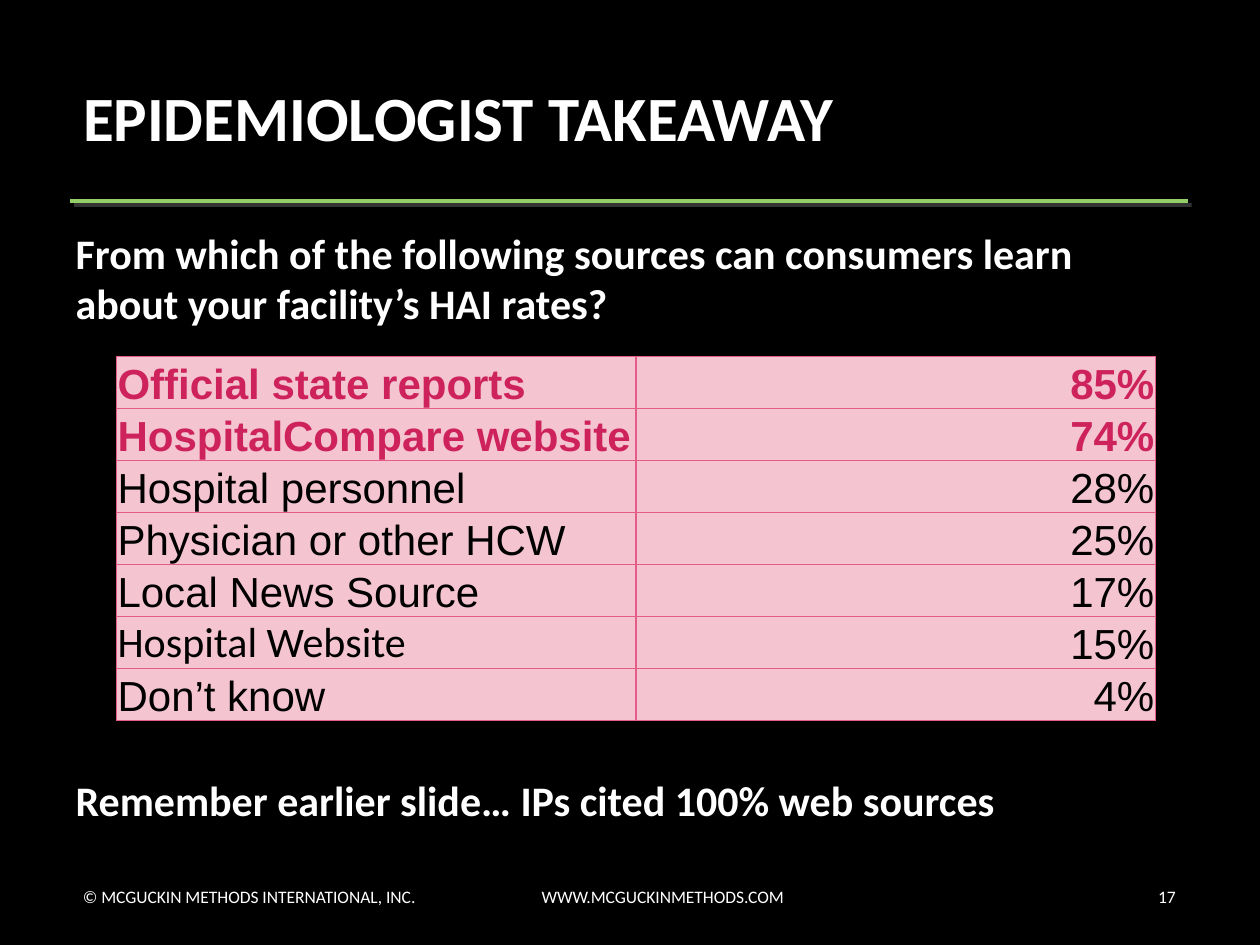
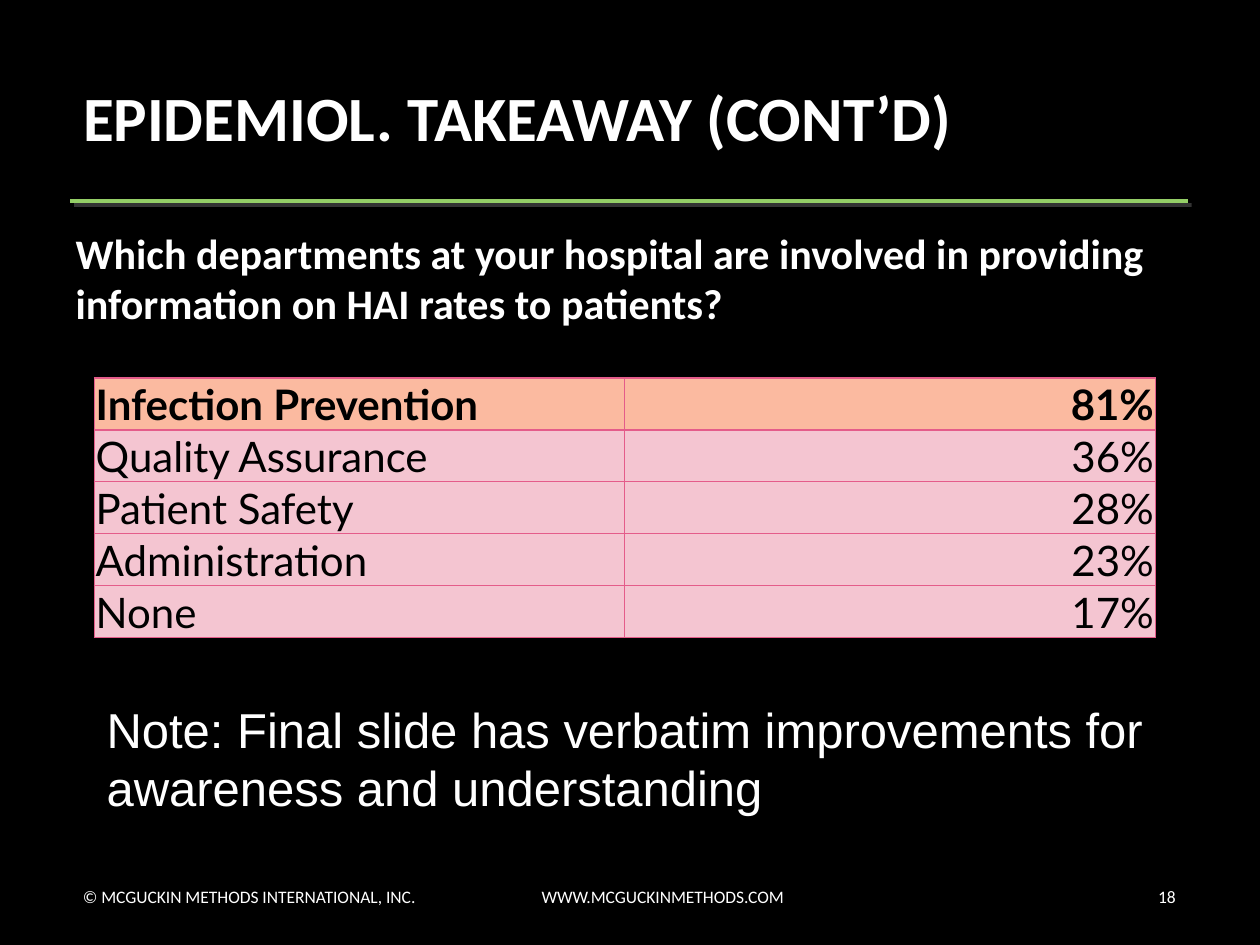
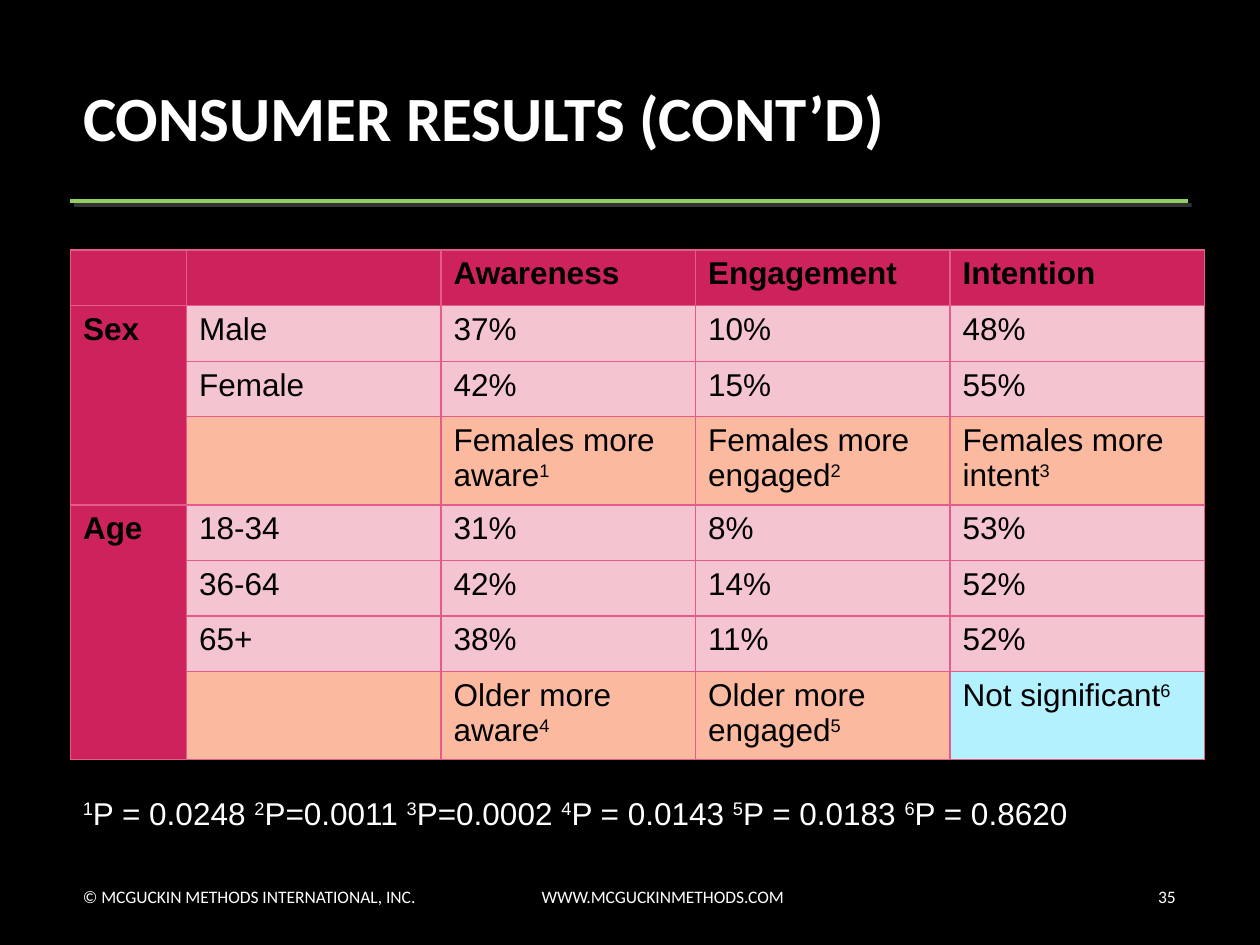
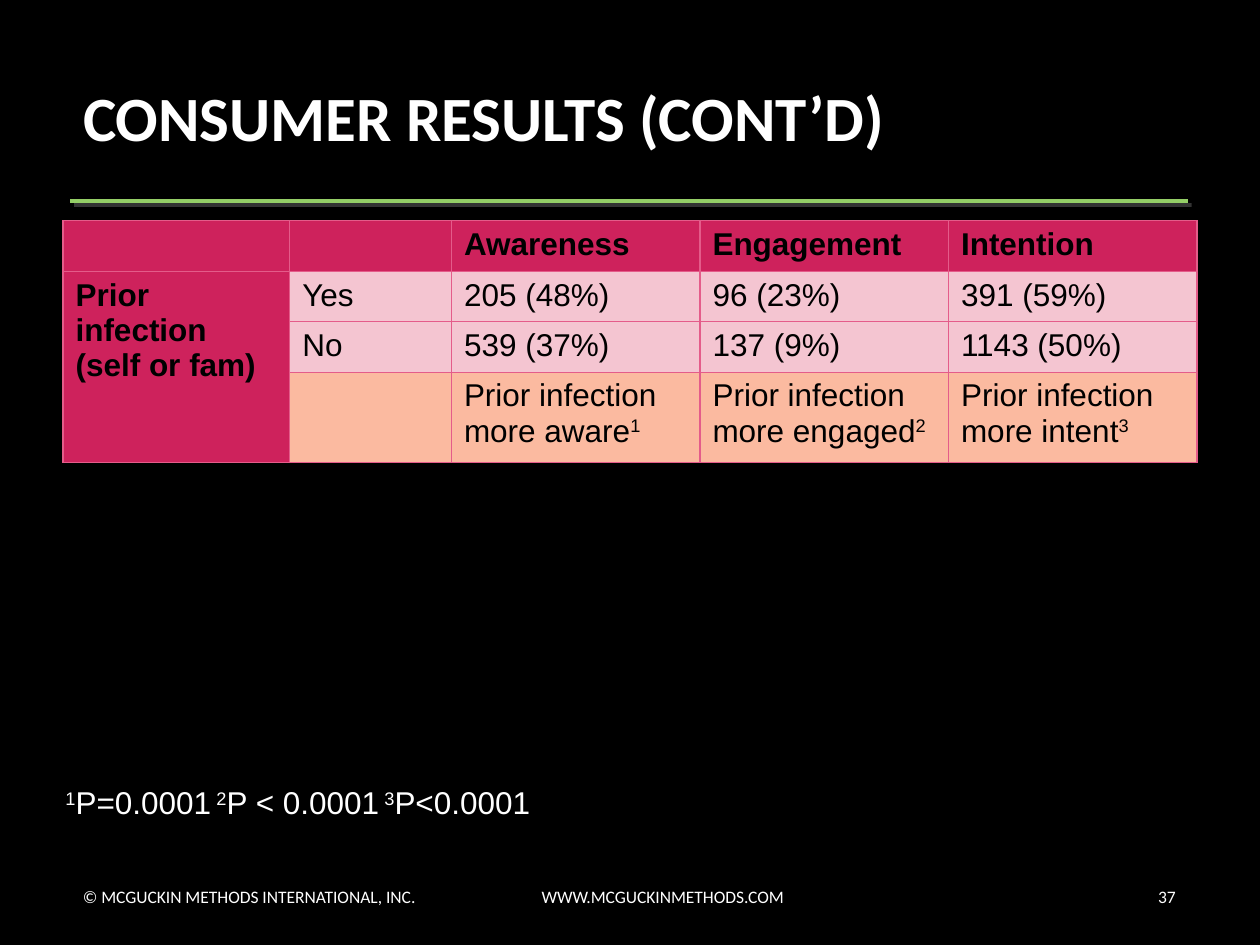
from typing import NamedTuple

from lxml.etree import SubElement
from pptx import Presentation
from pptx.dml.color import RGBColor
from pptx.enum.shapes import MSO_CONNECTOR as Connector
from pptx.enum.text import MSO_ANCHOR as Anchor, MSO_AUTO_SIZE as AutoSize, PP_ALIGN as Align
from pptx.oxml.ns import qn
from pptx.util import Cm, Pt

BLACK, WHITE, GREEN, GREY = "000000", "FFFFFF", "94CE67", "808080"
CRIMSON, PINK, ROSE = "CE225C", "F4C5D1", "E45C8A"
PEACH, SKY = "FBBAA0", "B3F1FF"


class Box(NamedTuple):
    """A region of the slide, in centimetres."""
    left: float
    top: float
    width: float
    height: float

    def lengths(self):
        """Return the four measures as lengths."""
        return [Cm(value) for value in self]


class Style(NamedTuple):
    """The look of a piece of text."""
    size: float
    font: str = "Arial"
    color: str = WHITE
    bold: bool = False


SLIDE = Box(0, 0, 25.4, 19.05)
TITLE = Box(1.42, 0.66, 22.53, 3.38)
BODY = Box(1.27, 4.45, 22.86, 14.17)
FOOTER = Box(1.42, 17.55, 22.53, 1.04)
RULE_TOP = 4.06
URL_TAB = 9.25
NUMBER_WIDTH = 1.14

TITLE_STYLE = Style(36, "Calibri", bold=True)
BODY_STYLE = Style(24, "Calibri", bold=True)
FOOTER_STYLE = Style(10, "Calibri")
PLAIN = Style(24, "Arial", BLACK)
KEY = Style(24, "Arial", CRIMSON, True)
GRID = Style(18, "Arial", BLACK)
FOOTNOTE = Style(18)


def rgb(hex_color):
    """Turn a hex string into a colour."""
    return RGBColor.from_string(hex_color)


def apply_style(paragraph, style):
    """Format every run of a paragraph."""
    for run in paragraph.runs:
        run.font.size = Pt(style.size)
        run.font.name = style.font
        run.font.bold = style.bold
        run.font.color.rgb = rgb(style.color)


def write(paragraph, text, style):
    """Write text whose superscripts stand between carets."""
    for index, part in enumerate(text.split("^")):
        if part:
            run = paragraph.add_run()
            run.text = part
            if index % 2:
                run.font._element.set("baseline", "30000")
    apply_style(paragraph, style)


def add_text(slide, box, text, style, align=Align.LEFT, anchor=Anchor.TOP):
    """Add a wrapped text box and return its paragraph."""
    frame = slide.shapes.add_textbox(*box.lengths()).text_frame
    frame.word_wrap = True
    frame.vertical_anchor = anchor
    paragraph = frame.paragraphs[0]
    paragraph.alignment = align
    write(paragraph, text, style)
    return paragraph


def place(placeholder, box, anchor):
    """Move a placeholder into a box and return its text frame."""
    placeholder.left, placeholder.top, placeholder.width, placeholder.height = box.lengths()
    frame = placeholder.text_frame
    frame.word_wrap = True
    frame.auto_size = AutoSize.NONE
    frame.vertical_anchor = anchor
    return frame


def add_title(slide, text):
    """Fill the title placeholder."""
    frame = place(slide.shapes.title, TITLE, Anchor.MIDDLE)
    frame.text = text
    frame.paragraphs[0].alignment = Align.LEFT
    apply_style(frame.paragraphs[0], TITLE_STYLE)


def add_body(slide, question, remark=None, gap=0):
    """Fill the body placeholder with a question and a remark further down."""
    frame = place(slide.placeholders[1], BODY, Anchor.TOP)
    frame.text = "\n".join(filter(None, (question, remark)))
    for index, paragraph in enumerate(frame.paragraphs):
        paragraph.space_before = Pt(gap * index)
        properties = paragraph._p.get_or_add_pPr()
        properties.set("marL", "0")
        properties.set("indent", "0")
        SubElement(properties, qn("a:buNone"))
        apply_style(paragraph, BODY_STYLE)


def add_footer(slide, number):
    """Add the copyright line, web address and slide number."""
    copyright_box = FOOTER._replace(width=17.65)
    line = add_text(slide, copyright_box,
                    "© MCGUCKIN METHODS INTERNATIONAL, INC.\tWWW.MCGUCKINMETHODS.COM",
                    FOOTER_STYLE, anchor=Anchor.MIDDLE)
    tabs = SubElement(line._p.get_or_add_pPr(), qn("a:tabLst"))
    SubElement(tabs, qn("a:tab"), pos=str(Cm(URL_TAB)), algn="l")
    number_box = FOOTER._replace(left=FOOTER.left + FOOTER.width - NUMBER_WIDTH,
                                 width=NUMBER_WIDTH)
    add_text(slide, number_box, str(number), FOOTER_STYLE, Align.RIGHT, Anchor.MIDDLE)


def add_master_rule(prs, slide):
    """Draw the green rule with its shadow and hand it to the master."""
    rule = slide.shapes.add_connector(Connector.STRAIGHT, Cm(TITLE.left), Cm(RULE_TOP),
                                      Cm(TITLE.left + TITLE.width), Cm(RULE_TOP))
    rule.line.color.rgb = rgb(GREEN)
    rule.line.width = Pt(2.25)
    effects = SubElement(rule._element.spPr, qn("a:effectLst"))
    shadow = SubElement(effects, qn("a:outerShdw"), dist=str(Pt(3)), dir="2700000",
                        algn="ctr", rotWithShape="0")
    tint = SubElement(shadow, qn("a:srgbClr"), val=GREY)
    SubElement(tint, qn("a:alpha"), val="40000")
    prs.slide_master.shapes.element.append(rule._element)


def paint_cell(cell, fill):
    """Give a cell its borders and fill."""
    properties = cell._tc.get_or_add_tcPr()
    for side in ("L", "R", "T", "B"):
        border = SubElement(properties, qn(f"a:ln{side}"), w=str(Pt(0.75)))
        SubElement(SubElement(border, qn("a:solidFill")), qn("a:srgbClr"), val=ROSE)
    cell.fill.solid()
    cell.fill.fore_color.rgb = rgb(fill)


def add_grid(slide, box, columns, rows):
    """Add an unstyled table with the given column widths and row heights."""
    table = slide.shapes.add_table(len(rows), len(columns), *box.lengths()).table
    table.first_row = table.horz_banding = False
    for column, width in zip(table.columns, columns):
        column.width = Cm(width)
    for row, height in zip(table.rows, rows):
        row.height = Cm(height)
    return table


def add_share_table(slide, box, answers):
    """Add a two-column table of answers, shares, fills and styles."""
    rows = [box.height / len(answers)] * len(answers)
    table = add_grid(slide, box, [box.width / 2] * 2, rows)
    for row, (answer, share, fill, answer_style, share_style) in enumerate(answers):
        parts = ((answer, answer_style, Align.LEFT), (share, share_style, Align.RIGHT))
        for column, (text, style, align) in enumerate(parts):
            cell = table.cell(row, column)
            paint_cell(cell, fill)
            cell.margin_left = cell.margin_right = cell.margin_top = Cm(0.03)
            cell.margin_bottom = 0
            cell.vertical_anchor = Anchor.BOTTOM
            paragraph = cell.text_frame.paragraphs[0]
            paragraph.alignment = align
            write(paragraph, text, style)


def add_results_table(slide, box, columns, rows, groups, special=None):
    """Add a results grid whose groups end in a finding row."""
    heading = ("", "", "Awareness", "Engagement", "Intention")
    lines, fills, spans = [heading], [CRIMSON], []
    for label, results in groups:
        spans.append((len(lines), len(lines) + len(results) - 1))
        lines += [(label if index == 0 else "", *result) for index, result in enumerate(results)]
        fills += [PINK] * (len(results) - 1) + [PEACH]
    table = add_grid(slide, box, columns, rows)
    for row, (line, row_fill) in enumerate(zip(lines, fills)):
        for column, text in enumerate(line):
            cell = table.cell(row, column)
            label = row == 0 or column == 0
            paint_cell(cell, CRIMSON if label else SKY if text == special else row_fill)
            if text:
                write(cell.text_frame.paragraphs[0], text, GRID._replace(bold=label))
            else:
                cell.margin_top = cell.margin_bottom = 0
    for first, last in spans:
        table.cell(first, 0).merge(table.cell(last, 0))


def start_slide(prs, layout, title, number):
    """Add a slide with its title and footer."""
    slide = prs.slides.add_slide(prs.slide_layouts[layout])
    add_title(slide, title)
    add_footer(slide, number)
    return slide


def sources_slide(prs):
    """Build the slide on sources of HAI rates."""
    slide = start_slide(prs, 1, "EPIDEMIOLOGIST TAKEAWAY", 17)
    add_body(slide, "From which of the following sources can consumers learn "
             "about your facility’s HAI rates?",
             "Remember earlier slide… IPs cited 100% web sources", 255)
    website = PLAIN._replace(font="Calibri")
    add_share_table(slide, Box(2.34, 7.19, 20.96, 6.79), [
        ("Official state reports", "85%", PINK, KEY, KEY),
        ("HospitalCompare website", "74%", PINK, KEY, KEY),
        ("Hospital personnel", "28%", PINK, PLAIN, PLAIN),
        ("Physician or other HCW", "25%", PINK, PLAIN, PLAIN),
        ("Local News Source", "17%", PINK, PLAIN, PLAIN),
        ("Hospital Website", "15%", PINK, website, PLAIN),
        ("Don’t know", "4%", PINK, PLAIN, PLAIN),
    ])
    return slide


def departments_slide(prs):
    """Build the slide on departments that inform patients."""
    slide = start_slide(prs, 1, "EPIDEMIOL. TAKEAWAY (CONT’D)", 18)
    add_body(slide, "Which departments at your hospital are involved in providing "
             "information on HAI rates to patients?")
    normal = PLAIN._replace(font="Lato")
    strong = normal._replace(bold=True)
    others = [("Quality Assurance", "36%"), ("Patient Safety", "28%"),
              ("Administration", "23%"), ("None", "17%")]
    add_share_table(slide, Box(1.9, 7.62, 21.39, 5.23),
                    [("Infection Prevention", "81%", PEACH, strong, strong)]
                    + [(*other, PINK, normal, normal) for other in others])
    add_text(slide, Box(1.9, 13.97, 21.39, 2.64),
             "Note: Final slide has verbatim improvements for awareness and understanding",
             Style(28))


def demographics_slide(prs):
    """Build the slide on results by sex and age."""
    slide = start_slide(prs, 5, "CONSUMER RESULTS (CONT’D)", 35)
    single, double = 1.12, 1.67
    not_significant = "Not significant^6^"
    groups = [
        ("Sex", [("Male", "37%", "10%", "48%"),
                 ("Female", "42%", "15%", "55%"),
                 ("", "Females more aware^1^", "Females more engaged^2^",
                  "Females more intent^3^")]),
        ("Age", [("18-34", "31%", "8%", "53%"),
                 ("36-64", "42%", "14%", "52%"),
                 ("65+", "38%", "11%", "52%"),
                 ("", "Older more aware^4^", "Older more engaged^5^", not_significant)]),
    ]
    add_results_table(slide, Box(1.42, 5.04, 22.86, 10.06), [2.34] + [5.13] * 4,
                      [single] * 3 + [double] + [single] * 3 + [double],
                      groups, not_significant)
    add_text(slide, Box(1.42, 15.88, 23.06, 1.02),
             "^1^P = 0.0248 ^2^P=0.0011 ^3^P=0.0002 ^4^P = 0.0143 ^5^P = 0.0183 ^6^P = 0.8620",
             FOOTNOTE)


def prior_infection_slide(prs):
    """Build the slide on results by prior infection."""
    slide = start_slide(prs, 5, "CONSUMER RESULTS (CONT’D)", 37)
    groups = [("Prior infection (self or fam)", [
        ("Yes", "205 (48%)", "96 (23%)", "391 (59%)"),
        ("No", "539 (37%)", "137 (9%)", "1143 (50%)"),
        ("", "Prior infection more aware^1^", "Prior infection more engaged^2^",
         "Prior infection more intent^3^")])]
    add_results_table(slide, Box(1.27, 4.45, 22.86, 4.73), [4.57, 3.26] + [5.01] * 3,
                      [0.97] * 3 + [1.82], groups)
    add_text(slide, Box(1.07, 15.67, 22.86, 1.02),
             "^1^P=0.0001^ 2^P < 0.0001^ 3^P<0.0001", FOOTNOTE)


def main():
    """Build and save the presentation."""
    prs = Presentation()
    prs.slide_width, prs.slide_height = Cm(SLIDE.width), Cm(SLIDE.height)
    backdrop = prs.slide_master.background.fill
    backdrop.solid()
    backdrop.fore_color.rgb = rgb(BLACK)
    add_master_rule(prs, sources_slide(prs))
    departments_slide(prs)
    demographics_slide(prs)
    prior_infection_slide(prs)
    prs.save("out.pptx")


if __name__ == "__main__":
    main()
